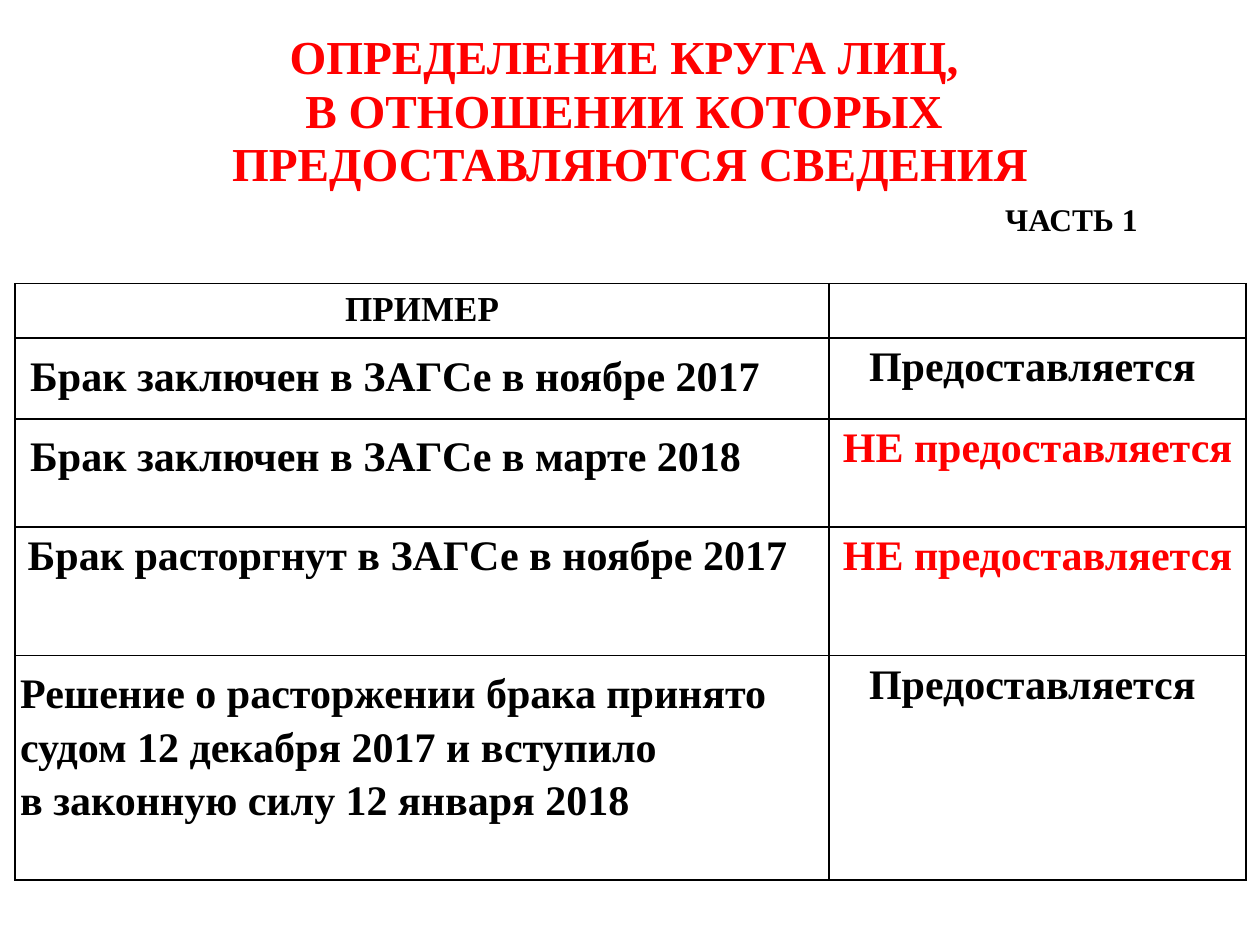
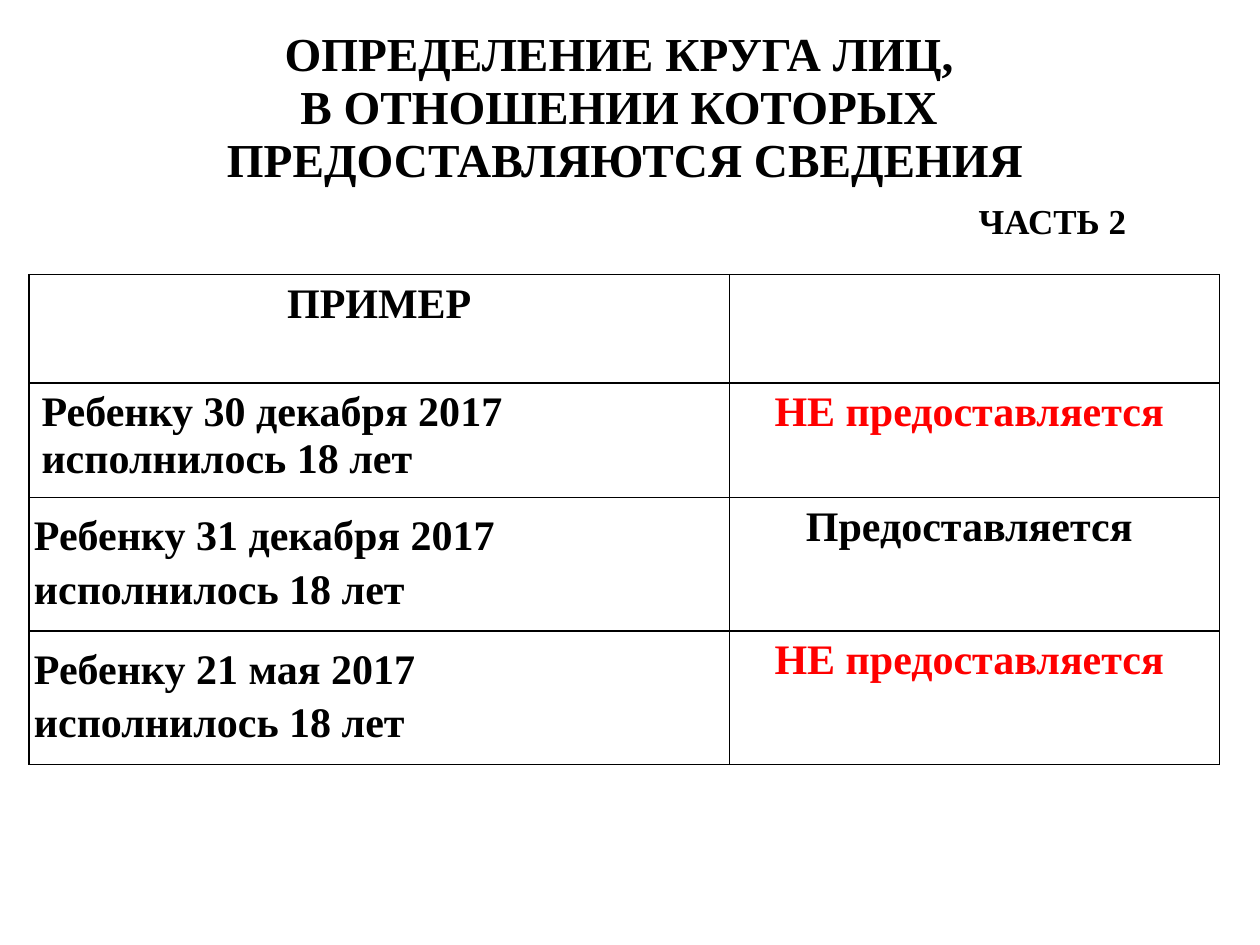
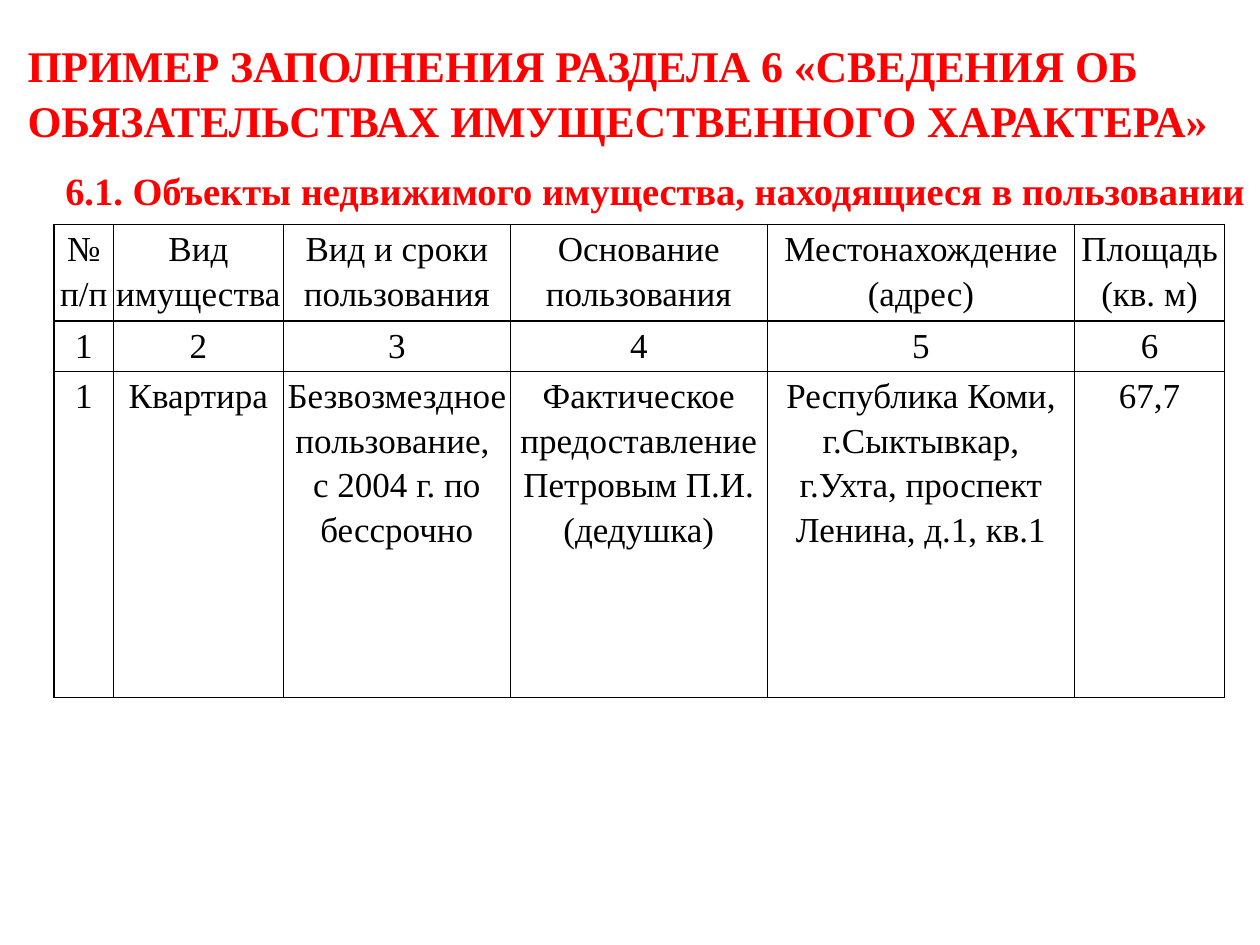
"""Builds three slides on who and what an income declaration covers."""
from lxml import etree
from pptx import Presentation
from pptx import util as u
from pptx.dml import color
from pptx.enum import text
from pptx.oxml import ns

FONT = "Times New Roman"
RED, BLACK, WHITE = "FF0000", "000000", "FFFFFF"
LEFT, CENTER, JUSTIFY = text.PP_ALIGN.LEFT, text.PP_ALIGN.CENTER, text.PP_ALIGN.JUSTIFY
PLAIN = (0.1, 0.05, 0.1, 0.05)
TIGHT = (0.04, 0.07, 0.04, 0.07)
INDENTED = (0.12, 0.07, 0.04, 0.07)
NARROW = (0.02, 0, 0.02, 0)
HEADING = ["ОПРЕДЕЛЕНИЕ КРУГА ЛИЦ, ", "В ОТНОШЕНИИ КОТОРЫХ ", "ПРЕДОСТАВЛЯЮТСЯ СВЕДЕНИЯ"]
PROVIDED = ("Предоставляется ", BLACK)
NOT_PROVIDED = ("НЕ предоставляется ", RED)


def rgb(value):
    """Return the colour for a hex string."""
    return color.RGBColor.from_string(value)


def style(paragraph, size, hue=BLACK, bold=True, align=LEFT, spacing=1.0):
    """Set the font, alignment and line spacing of a paragraph."""
    font = paragraph.font
    font.name, font.size, font.bold = FONT, u.Pt(size), bold
    font.color.rgb = rgb(hue)
    paragraph.alignment = align
    paragraph.line_spacing = spacing


def add_text(slide, box, lines, size, hue, align=LEFT, spacing=1.0):
    """Add a wrapping text box and return its text frame."""
    frame = slide.shapes.add_textbox(*map(u.Inches, box)).text_frame
    frame.word_wrap = True
    frame.text = "\n".join(lines)
    for paragraph in frame.paragraphs:
        style(paragraph, size, hue, True, align, spacing)
    return frame


def add_heading(slide, box, hue, part, part_size, part_indent, part_gap):
    """Add the shared heading with its part label below."""
    frame = add_text(slide, box, HEADING, 27, hue, CENTER, 0.94)
    frame.vertical_anchor = text.MSO_ANCHOR.MIDDLE
    label = frame.add_paragraph()
    label.text = part
    style(label, part_size, spacing=0.94)
    label.space_before = u.Pt(part_gap)
    properties = label._p.get_or_add_pPr()
    properties.set("marL", str(u.Inches(part_indent)))
    properties.set("indent", "0")


def add_borders(cell):
    """Draw a thin black line on each side of a cell."""
    properties = cell._tc.get_or_add_tcPr()
    for position, side in enumerate(("lnL", "lnR", "lnT", "lnB")):
        line = etree.Element(ns.qn(f"a:{side}"), w=str(u.Pt(1)))
        fill = etree.SubElement(line, ns.qn("a:solidFill"))
        etree.SubElement(fill, ns.qn("a:srgbClr"), val=BLACK)
        properties.insert(position, line)


def add_grid(slide, left, top, widths, heights):
    """Add a white bordered table and return it."""
    box = (left, top, sum(widths), sum(heights))
    table = slide.shapes.add_table(len(heights), len(widths), *map(u.Inches, box)).table
    table.first_row = table.horz_banding = False
    for column, width in zip(table.columns, widths):
        column.width = u.Inches(width)
    for row, height in zip(table.rows, heights):
        row.height = u.Inches(height)
    for cell in table.iter_cells():
        cell.fill.solid()
        cell.fill.fore_color.rgb = rgb(WHITE)
        add_borders(cell)
    return table


def fill_cell(cell, content, size, insets=PLAIN, **look):
    """Write styled text in a cell."""
    cell.margin_left, cell.margin_top, cell.margin_right, cell.margin_bottom = map(u.Inches, insets)
    cell.text_frame.text = content
    for paragraph in cell.text_frame.paragraphs:
        style(paragraph, size, **look)


def add_examples(slide, left, top, widths, heights, header_size, examples):
    """Add a table of example cases and their verdicts."""
    table = add_grid(slide, left, top, widths, heights)
    fill_cell(table.cell(0, 0), "ПРИМЕР", header_size, align=CENTER)
    for row, (case, insets, align, (verdict, hue)) in enumerate(examples, 1):
        spacing = 1.0 if insets == PLAIN else 1.15
        fill_cell(table.cell(row, 0), case, 24, insets, align=align, spacing=spacing)
        fill_cell(table.cell(row, 1), verdict, 24, hue=hue, align=CENTER)


def add_marriage_slide(slide):
    """Build part 1, on marriage and divorce."""
    add_heading(slide, (0.12, 0.21, 9.76, 1.73), RED, "ЧАСТЬ 1", 18, 7.76, 6.3)
    add_examples(slide, 0.12, 2.25, [6.46, 3.31], [0.42, 0.64, 0.86, 1.02, 1.78], 20, [
        ("Брак заключен в ЗАГСе в ноябре 2017", INDENTED, JUSTIFY, PROVIDED),
        ("Брак заключен в ЗАГСе в марте 2018", INDENTED, JUSTIFY, NOT_PROVIDED),
        ("Брак расторгнут в ЗАГСе в ноябре 2017", PLAIN, LEFT, ("НЕ предоставляется", RED)),
        ("Решение о расторжении брака принято судом 12 декабря 2017 и вступило\n"
         "в законную силу 12 января 2018", TIGHT, LEFT, PROVIDED),
    ])


def add_children_slide(slide):
    """Build part 2, on children who came of age."""
    add_examples(slide, 0.23, 2.18, [5.56, 3.89], [0.86, 0.91, 0.98, 1.01], 24, [
        ("Ребенку 30 декабря 2017\nисполнилось 18 лет", PLAIN, LEFT, NOT_PROVIDED),
        ("Ребенку 31 декабря 2017\nисполнилось 18 лет", TIGHT, JUSTIFY, PROVIDED),
        ("Ребенку 21 мая 2017\nисполнилось 18 лет", TIGHT, JUSTIFY, NOT_PROVIDED),
    ])
    add_heading(slide, (0.31, 0.21, 9.3, 1.73), BLACK, "ЧАСТЬ 2", 20, 7.36, 8)


def add_property_slide(slide):
    """Build the sample of section 6 on property in use."""
    add_text(slide, (0.42, 1.28, 9.86, 0.47),
             ["6.1. Объекты недвижимого имущества, находящиеся в пользовании"], 22, RED)
    add_text(slide, (0.12, 0.24, 9.88, 0.94),
             ["ПРИМЕР ЗАПОЛНЕНИЯ РАЗДЕЛА 6 «СВЕДЕНИЯ ОБ ОБЯЗАТЕЛЬСТВАХ ИМУЩЕСТВЕННОГО ХАРАКТЕРА»"],
             25, RED, spacing=1.05)
    rows = [
        ["№\vп/п", "Вид имущества", "Вид и сроки пользования", "Основание пользования",
         "Местонахождение (адрес)", "Площадь\v(кв. м)"],
        [str(number) for number in range(1, 7)],
        ["1", "Квартира", "Безвозмездное пользование, \vс 2004 г. по бессрочно",
         "Фактическое предоставление Петровым П.И. (дедушка)",
         "Республика Коми, г.Сыктывкар, г.Ухта, проспект Ленина, д.1, кв.1", "67,7"],
    ]
    table = add_grid(slide, 0.43, 1.78, [0.47, 1.35, 1.8, 2.04, 2.44, 1.19], [0.76, 0.4, 2.59])
    for cell, content in zip(table.iter_cells(), sum(rows, [])):
        fill_cell(cell, content, 20, NARROW, bold=False, align=CENTER, spacing=1.15)


def main():
    """Build and save the presentation."""
    presentation = Presentation()
    presentation.slide_width, presentation.slide_height = u.Inches(10), u.Inches(7.5)
    for build in (add_marriage_slide, add_children_slide, add_property_slide):
        build(presentation.slides.add_slide(presentation.slide_layouts[6]))
    presentation.save("out.pptx")


if __name__ == "__main__":
    main()
